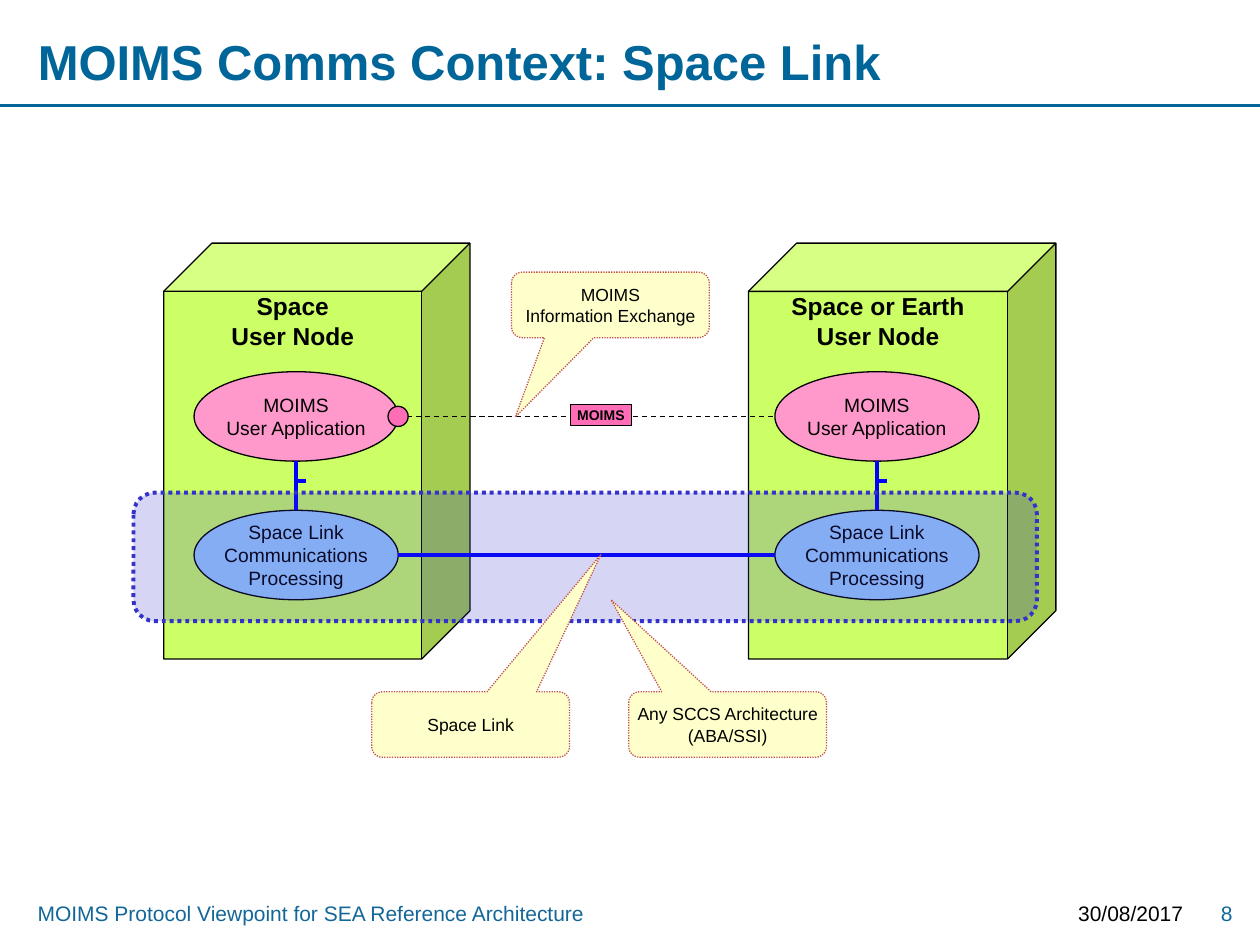
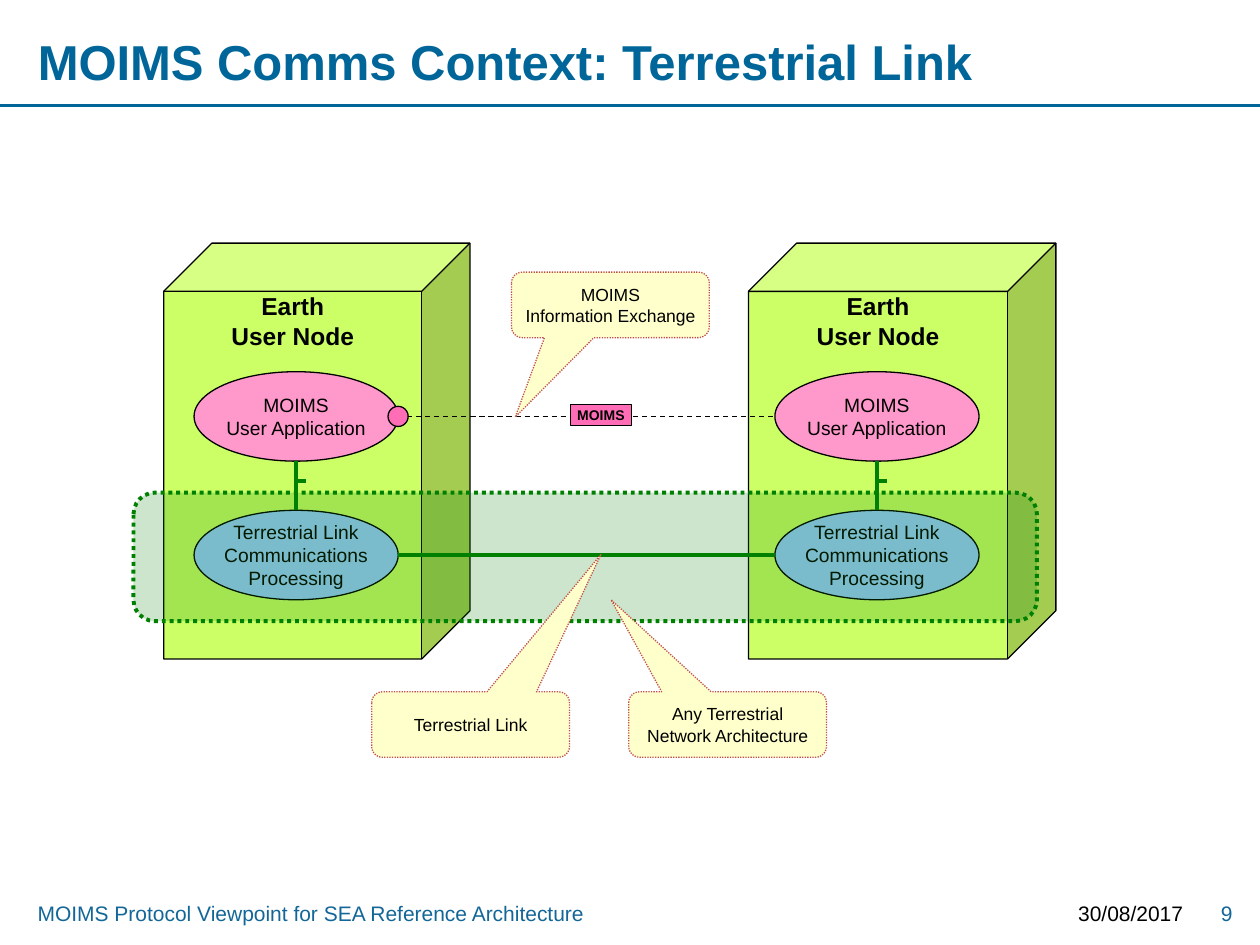
import pptx
import pptx.util
import pptx.dml.color
import pptx.enum.dml
import pptx.enum.shapes
import pptx.enum.text
import pptx.oxml.ns
from lxml import etree

Inches, Pt = pptx.util.Inches, pptx.util.Pt
KIND = pptx.enum.shapes.MSO_SHAPE
DASH = pptx.enum.dml.MSO_LINE
ALIGN = pptx.enum.text.PP_ALIGN
ANCHOR = pptx.enum.text.MSO_ANCHOR
qn = pptx.oxml.ns.qn

# Content
FOOT = "MOIMS Protocol Viewpoint for SEA Reference Architecture"
DATE = "30/08/2017"
APP = "MOIMS\nUser Application"
SLIDES = [
    dict(title="MOIMS Comms Context: Space Link", page="8",
         nodes=["Space\nUser Node", "Space or Earth\nUser Node"],
         link="Space Link", arch="Any SCCS Architecture\n(ABA/SSI)",
         wire="0000FF", band="3333CC"),
    dict(title="MOIMS Comms Context: Terrestrial Link", page="9",
         nodes=["Earth\nUser Node", "Earth\nUser Node"],
         link="Terrestrial Link", arch="Any Terrestrial\nNetwork Architecture",
         wire="008000", band="008000"),
]

# Colours
HEAD, SMALL, BLACK = "006699", "136798", "000000"
LIME, PINK, HOT, SKY = "CCFF66", "FF99CC", "FF6DB6", "99CCFF"
NOTE, EDGE = "FFFFCC", "C0504D"

# Places in inches
CUBES = [(1.3, 2.43), (5.94, 2.44)]     # left, width
CUBE_TOP, CUBE_HIGH = 1.93, 3.3
OVALS = [1.54, 6.15]                    # left edges
OVAL_W, OVAL_H = 1.62, 0.71
APP_TOP, LINK_TOP = 2.95, 4.05
NOTE_W, NOTE_H = 1.57, 0.52
TICK_Y, TICK = 3.82, 0.08
DOT = 0.16


def paint(color, code):
    color.rgb = pptx.dml.color.RGBColor.from_string(code)


def write(shape, text, size=12, color=BLACK, bold=False, align=ALIGN.CENTER,
          anchor=ANCHOR.MIDDLE, inset=(0.1, 0.05), wrap=True):
    frame = shape.text_frame
    frame.text = text
    frame.word_wrap = wrap
    frame.auto_size = pptx.enum.text.MSO_AUTO_SIZE.NONE
    frame.vertical_anchor = anchor
    frame.margin_left = frame.margin_right = Inches(inset[0])
    frame.margin_top = frame.margin_bottom = Inches(inset[1])
    for para in frame.paragraphs:
        para.alignment = align
        font = para.font
        font.name, font.size, font.bold = "Arial", Pt(size), bold
        paint(font.color, color)


def draw(slide, kind, box, fill, edge=BLACK, width=0.75, dash=None, alpha=None):
    shape = slide.shapes.add_shape(kind, *map(Inches, box))
    shape.shadow.inherit = False
    shape.fill.solid()
    paint(shape.fill.fore_color, fill)
    paint(shape.line.color, edge)
    shape.line.width = Pt(width)
    if dash:
        shape.line.dash_style = dash
    if alpha:
        tint = shape.element.spPr.find(qn("a:solidFill"))[0]
        etree.SubElement(tint, qn("a:alpha"), val=str(alpha * 1000))
    return shape


def join(slide, start, end, color, width=2.25, dash=None):
    line = slide.shapes.add_connector(
        pptx.enum.shapes.MSO_CONNECTOR.STRAIGHT, *map(Inches, start + end))
    paint(line.line.color, color)
    line.line.width = Pt(width)
    if dash:
        line.line.dash_style = dash
    etree.SubElement(line.element.spPr, qn("a:effectLst"))


def label(slide, text, box, **style):
    write(slide.shapes.add_textbox(*map(Inches, box)), text,
          anchor=ANCHOR.TOP, **style)


def oval(slide, left, top, text, fill):
    shape = draw(slide, KIND.OVAL, (left, top, OVAL_W, OVAL_H), fill)
    write(shape, text, size=11, inset=(0, 0.05))


def note(slide, text, left, top, tip):
    shape = draw(slide, KIND.ROUNDED_RECTANGULAR_CALLOUT,
                 (left, top, NOTE_W, NOTE_H), NOTE, EDGE, dash=DASH.ROUND_DOT)
    # The tail is measured from the centre, as a share of the size
    shape.adjustments[0] = (tip[0] - left) / NOTE_W - 0.5
    shape.adjustments[1] = (tip[1] - top) / NOTE_H - 0.5
    write(shape, text, size=10, inset=(0, 0))


def frame(slide, page):
    """Title, rule and footer."""
    title = slide.shapes.title
    title.left, title.top = Inches(0.2), Inches(0.21)
    title.width, title.height = Inches(7.95), Inches(0.55)
    write(title, page["title"], size=28, color=HEAD, bold=True, align=ALIGN.LEFT)
    join(slide, (0, 0.84), (10, 0.84), HEAD, 1.5)
    label(slide, FOOT, (0.2, 7.1, 8.11, 0.3), color=SMALL, align=ALIGN.LEFT)
    label(slide, DATE, (8.39, 7.1, 1.1, 0.3), align=ALIGN.RIGHT)
    label(slide, page["page"], (9.41, 7.1, 0.47, 0.3), color=SMALL,
          align=ALIGN.RIGHT)


def scene(slide, page):
    # Nodes with their two functions
    for (left, wide), name, x in zip(CUBES, page["nodes"], OVALS):
        cube = draw(slide, KIND.CUBE, (left, CUBE_TOP, wide, CUBE_HIGH), LIME)
        cube.adjustments[0] = 0.157
        write(cube, name, size=14, bold=True, anchor=ANCHOR.TOP,
              inset=(0.1, 0), wrap=False)
        oval(slide, x, APP_TOP, APP, PINK)
        oval(slide, x, LINK_TOP,
             page["link"] + "\nCommunications Processing", SKY)

    # Links across, then down inside each node
    near, far = OVALS[0] + OVAL_W, OVALS[1]
    app_y, link_y = APP_TOP + OVAL_H / 2, LINK_TOP + OVAL_H / 2
    wire = page["wire"]
    join(slide, (near, link_y), (far, link_y), wire)
    join(slide, (near, app_y), (far, app_y), BLACK, 0.75, DASH.DASH)
    for left in OVALS:
        mid = left + OVAL_W / 2
        join(slide, (mid, LINK_TOP), (mid, APP_TOP + OVAL_H), wire)
        join(slide, (mid, TICK_Y), (mid + TICK, TICK_Y), wire)

    # Exchange: callout, port and tag
    note(slide, "MOIMS\nInformation Exchange", 4.06, 2.16, (4.09, 3.31))
    draw(slide, KIND.OVAL, (near - DOT / 2, app_y - DOT / 2, DOT, DOT), HOT)
    tag = draw(slide, KIND.RECTANGLE, (4.53, 3.21, 0.48, 0.17), HOT)
    write(tag, "MOIMS", size=8, bold=True, inset=(0.02, 0.02))

    # Communications band and its callouts
    draw(slide, KIND.ROUNDED_RECTANGLE, (1.06, 3.91, 7.17, 1.02), page["band"],
         page["band"], 2.25, DASH.ROUND_DOT, alpha=20)
    note(slide, page["arch"], 4.99, 5.49, (4.85, 4.76))
    note(slide, page["link"], 2.95, 5.49, (4.77, 4.4))


def main():
    deck = pptx.Presentation()
    deck.slide_width, deck.slide_height = Inches(10), Inches(7.5)
    for page in SLIDES:
        slide = deck.slides.add_slide(deck.slide_layouts[5])
        frame(slide, page)
        scene(slide, page)
    deck.save("out.pptx")


if __name__ == "__main__":
    main()
